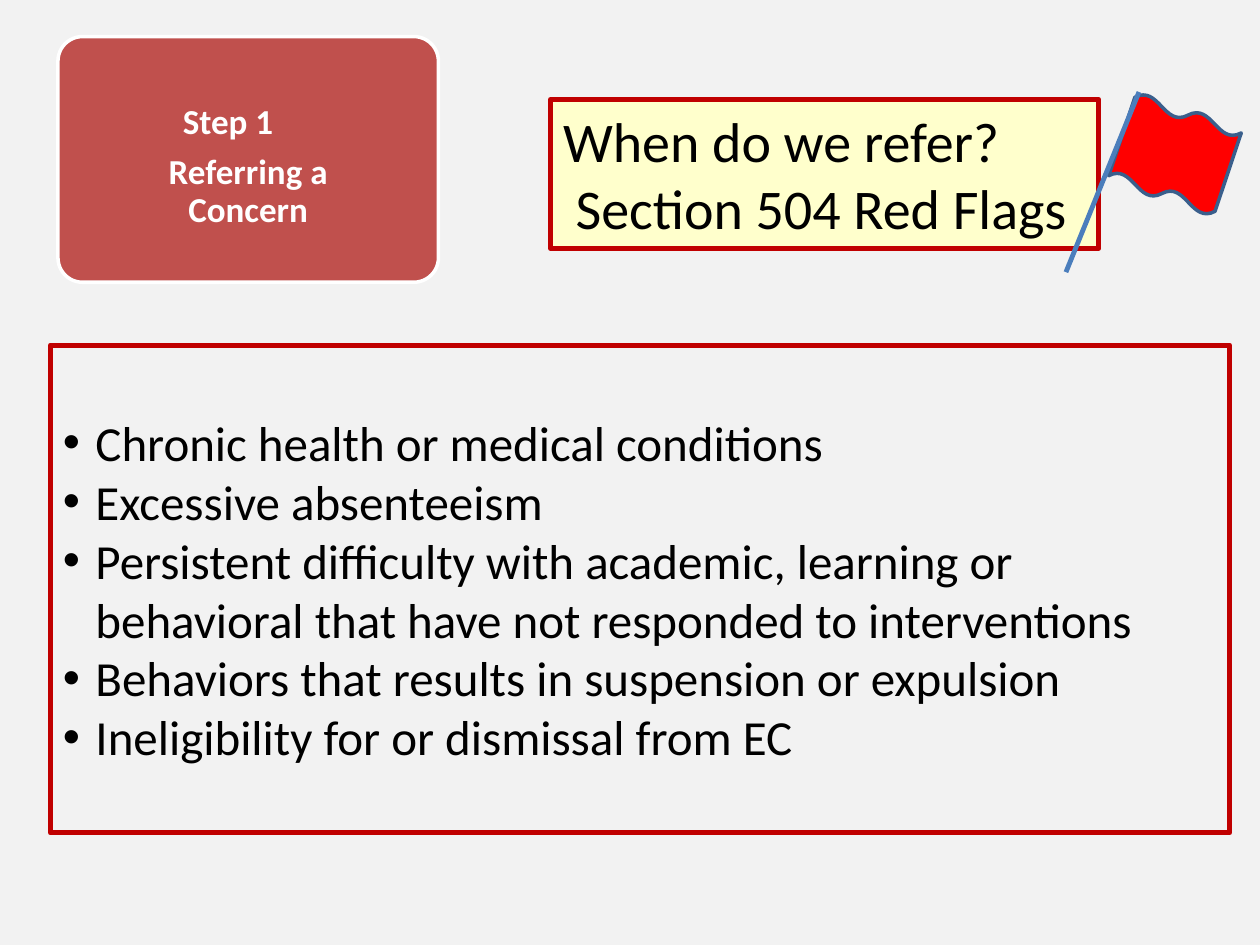
from dataclasses import dataclass

from lxml import etree
from pptx import Presentation
from pptx.dml.color import RGBColor
from pptx.enum.shapes import MSO_CONNECTOR, MSO_SHAPE
from pptx.enum.text import MSO_ANCHOR, PP_ALIGN
from pptx.oxml.ns import qn
from pptx.util import Inches, Pt

RECT, ROUND, WAVE = MSO_SHAPE.RECTANGLE, MSO_SHAPE.ROUNDED_RECTANGLE, MSO_SHAPE.DOUBLE_WAVE
TOP, MIDDLE = MSO_ANCHOR.TOP, MSO_ANCHOR.MIDDLE
LEFT, CENTER = PP_ALIGN.LEFT, PP_ALIGN.CENTER

RED, BLACK, WHITE = "C00000", "000000", "FFFFFF"


@dataclass
class Box:
    kind: int
    at: tuple[float, float, float, float]
    fill: str | None
    line: str
    weight: float


@dataclass
class Style:
    size: float
    color: str
    bold: bool = False
    align: PP_ALIGN = LEFT


def rgb(value: str) -> RGBColor:
    return RGBColor.from_string(value)


def add_box(s, box: Box):
    sp = s.shapes.add_shape(box.kind, *(Inches(v) for v in box.at))
    sp.shadow.inherit = False
    if box.fill:
        sp.fill.solid()
        sp.fill.fore_color.rgb = rgb(box.fill)
    else:
        sp.fill.background()
    sp.line.color.rgb = rgb(box.line)
    sp.line.width = Pt(box.weight)
    return sp


def add_text(sp, lines: list[str], style: Style, anchor=MIDDLE) -> list:
    tf = sp.text_frame
    tf.word_wrap = True
    tf.vertical_anchor = anchor
    for i, line in enumerate(lines):
        p = tf.paragraphs[0] if i == 0 else tf.add_paragraph()
        p.text = line
        p.alignment = style.align
        p.font.name = "Calibri"
        p.font.size = Pt(style.size)
        p.font.bold = style.bold
        p.font.color.rgb = rgb(style.color)
    return list(tf.paragraphs)


def set_indent(p, margin: float, first: float = 0, bullet: str = "") -> None:
    pPr = p._p.get_or_add_pPr()
    pPr.set("marL", str(Inches(margin)))
    pPr.set("indent", str(Inches(first)))
    if bullet:
        font = etree.Element(qn("a:buFont"), typeface="Arial")
        char = etree.Element(qn("a:buChar"), char=bullet)
        pPr.insert(0, font)
        font.addnext(char)


def add_line(s, start: tuple[float, float], end: tuple[float, float], color: str, weight: float) -> None:
    cn = s.shapes.add_connector(MSO_CONNECTOR.STRAIGHT, *(Inches(v) for v in start + end))
    cn.line.color.rgb = rgb(color)
    cn.line.width = Pt(weight)
    etree.SubElement(cn._element.spPr, qn("a:effectLst"))


def main() -> None:
    prs = Presentation()
    prs.slide_width, prs.slide_height = Inches(10), Inches(7.5)
    s = prs.slides.add_slide(prs.slide_layouts[6])
    s.background.fill.solid()
    s.background.fill.fore_color.rgb = rgb("F2F2F2")

    # Title, second line slightly indented
    title = add_box(s, Box(RECT, (4.37, 0.79, 4.35, 1.18), "FFFFCC", RED, 3))
    lines = add_text(title, ["When do we refer?", "Section 504 Red Flags"], Style(32, BLACK))
    set_indent(lines[1], 0.1)

    # List of red flags
    flags = add_box(s, Box(RECT, (0.4, 2.74, 9.36, 3.87), None, RED, 3))
    for p in add_text(flags, [
        "Chronic health or medical conditions",
        "Excessive absenteeism",
        "Persistent difficulty with academic, learning or behavioral "
        "that have not responded to interventions",
        "Behaviors that results in suspension or expulsion",
        "Ineligibility for or dismissal from EC",
    ], Style(28, BLACK)):
        set_indent(p, 0.26, -0.26, "•")

    # Flag and pole
    flag = add_box(s, Box(WAVE, (8.88, 0.85, 0.89, 0.75), "FF0000", "3A5F8C", 2))
    flag.rotation = 18.5
    add_line(s, (9.04, 0.73), (8.46, 2.16), "4B7EBC", 2.75)

    # Step card: the step number sits left of centre, its name in the centre
    shift = 0.32
    card = add_box(s, Box(ROUND, (0.46, 0.29, 3.02, 1.95), "C0504D", WHITE, 2))
    card.adjustments[0] = 0.1
    tf = card.text_frame
    tf.margin_left, tf.margin_right, tf.margin_top = Inches(0), Inches(shift), Inches(0.48)
    lines = add_text(card, ["Step 1", "Referring a Concern"], Style(20, WHITE, True, CENTER), TOP)
    for p in lines:
        p.line_spacing = 0.9
        p.space_after = Pt(7)
    set_indent(lines[1], shift)

    prs.save("out.pptx")


if __name__ == "__main__":
    main()
